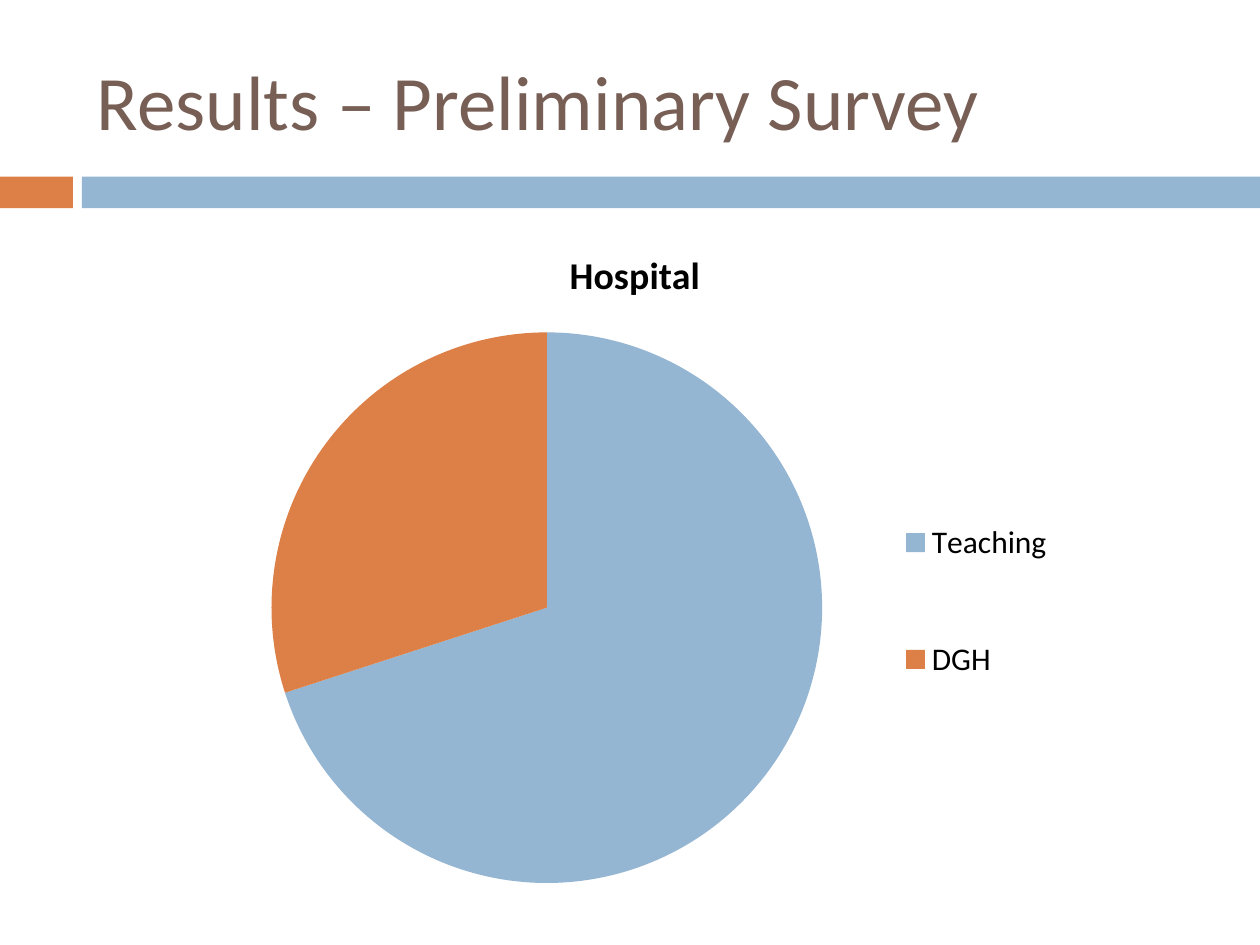
from lxml import etree
from pptx import Presentation
from pptx.chart.data import CategoryChartData
from pptx.dml.color import RGBColor
from pptx.enum import chart as ch, shapes, text
from pptx.oxml.ns import qn
from pptx.util import Cm, Pt

FONT = "Calibri"
BLUE = RGBColor(0x94, 0xB6, 0xD2)
ORANGE = RGBColor(0xDD, 0x80, 0x47)
BROWN = RGBColor(0x77, 0x5F, 0x55)
BLACK = RGBColor(0, 0, 0)

TITLE = "Results – Preliminary Survey"
CHART_TITLE = "Hospital"
SLICES = [("Teaching", 70, BLUE), ("DGH", 30, ORANGE)]
BARS = [(0, 1.47, ORANGE), (1.65, 23.75, BLUE)]
PLOT_BOX = (0.17, 0.16, 0.5, 0.82)
LEGEND_BOX = (0.73, 0.33, 0.16, 0.46)


def set_font(font, size, color, bold=False):
    font.name, font.size, font.bold = FONT, Pt(size), bold
    font.color.rgb = color


def place(part, box, inner=False):
    layout = part.find(qn("c:layout"))
    if layout is None:
        layout = etree.Element(qn("c:layout"))
        if inner:
            part.insert(0, layout)
        else:
            part.find(qn("c:legendPos")).addnext(layout)
    manual = etree.SubElement(layout, qn("c:manualLayout"))
    values = [("layoutTarget", "inner")] if inner else []
    values += [("xMode", "edge"), ("yMode", "edge"), *zip("xywh", box)]
    for tag, value in values:
        etree.SubElement(manual, qn(f"c:{tag}")).set("val", str(value))


def add_bars(s):
    for left, width, color in BARS:
        sp = s.shapes.add_shape(shapes.MSO_SHAPE.RECTANGLE,
                                Cm(left), Cm(3.56), Cm(width), Cm(0.64))
        sp.shadow.inherit = False
        sp.fill.solid()
        sp.fill.fore_color.rgb = color
        sp.line.fill.background()


def add_title(s):
    sp = s.shapes.title
    sp.left, sp.top, sp.width, sp.height = Cm(1.7), Cm(0.64), Cm(22.66), Cm(2.74)
    tf = sp.text_frame
    tf.text = TITLE
    tf.word_wrap = True
    tf.vertical_anchor = text.MSO_ANCHOR.MIDDLE
    p = tf.paragraphs[0]
    p.alignment = text.PP_ALIGN.LEFT
    set_font(p.runs[0].font, 44, BROWN)


def add_pie(s):
    data = CategoryChartData()
    data.categories = [name for name, _, _ in SLICES]
    data.add_series(CHART_TITLE, [value for _, value, _ in SLICES])
    chart = s.shapes.add_chart(ch.XL_CHART_TYPE.PIE, Cm(1.7), Cm(4.45),
                               Cm(22.2), Cm(13.69), data).chart
    set_font(chart.font, 18, BLACK)
    chart.has_title = True
    tf = chart.chart_title.text_frame
    tf.text = CHART_TITLE
    set_font(tf.paragraphs[0].runs[0].font, 21.6, BLACK, bold=True)
    chart.has_legend = True
    legend = chart.legend
    legend.position = ch.XL_LEGEND_POSITION.RIGHT
    legend.include_in_layout = False
    set_font(legend.font, 18, BLACK)
    plot = chart.plots[0]
    plot.vary_by_categories = True
    for i, (_, _, color) in enumerate(SLICES):
        fill = plot.series[0].points[i].format.fill
        fill.solid()
        fill.fore_color.rgb = color
    root = chart.element
    place(root.find(".//" + qn("c:plotArea")), PLOT_BOX, inner=True)
    place(root.find(".//" + qn("c:legend")), LEGEND_BOX)


def main():
    prs = Presentation()
    prs.slide_width, prs.slide_height = Cm(25.4), Cm(19.05)
    s = prs.slides.add_slide(prs.slide_layouts[5])
    add_bars(s)
    add_title(s)
    add_pie(s)
    prs.save("out.pptx")


if __name__ == "__main__":
    main()
